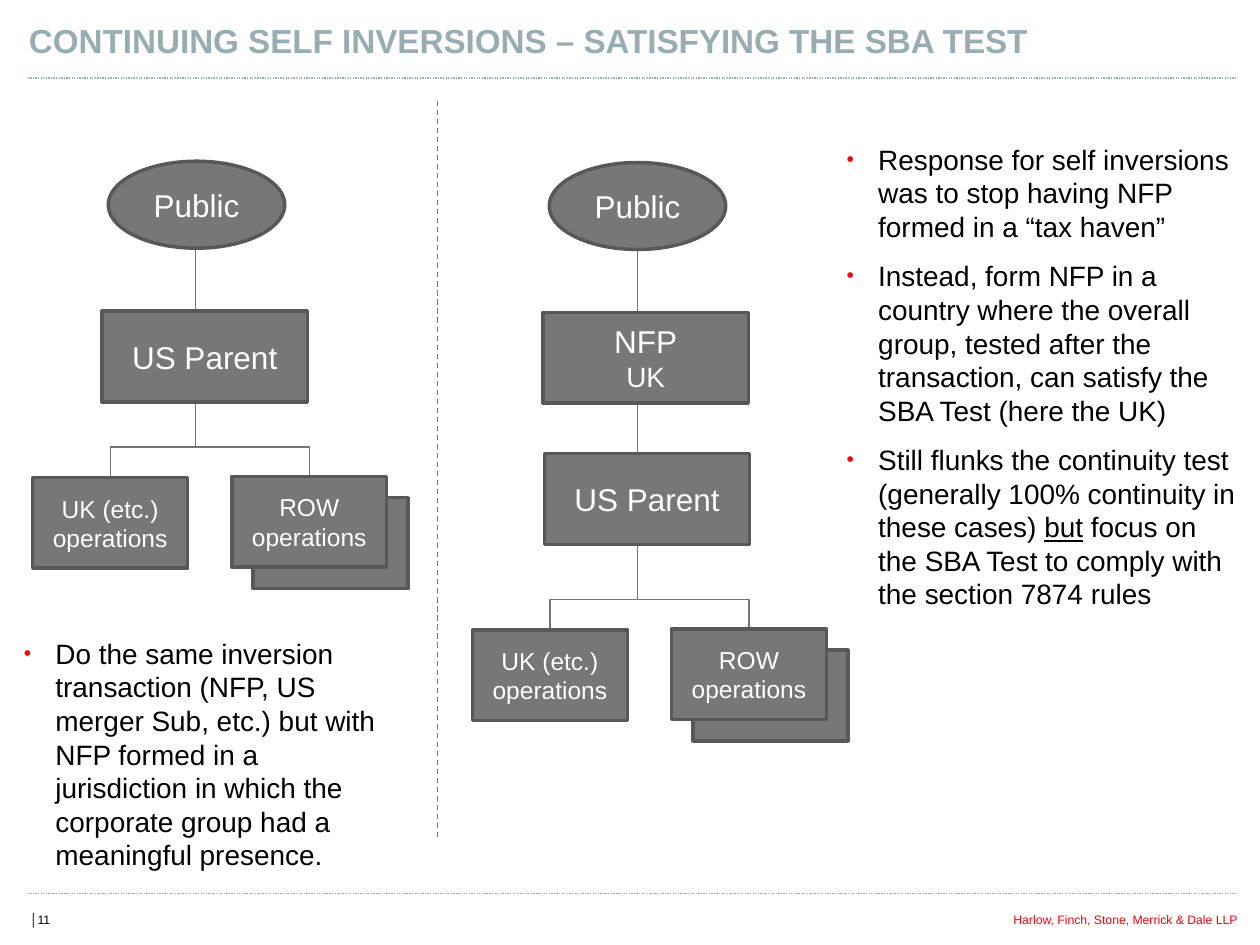
from lxml import etree
from pptx import Presentation
from pptx.dml.color import RGBColor
from pptx.enum.dml import MSO_LINE
from pptx.enum.shapes import MSO_CONNECTOR as CONN, MSO_SHAPE as SHAPE
from pptx.enum.text import MSO_ANCHOR as ANCHOR, MSO_AUTO_SIZE as AUTO, PP_ALIGN as ALIGN
from pptx.oxml import parse_xml
from pptx.oxml.ns import nsdecls, qn
from pptx.util import Inches, Pt


def rgb(value):
    return RGBColor.from_string(value)


def style(font, size, color):
    font.name = "Arial"
    font.size = Pt(size)
    font.color.rgb = rgb(color)


prs = Presentation()
prs.slide_width, prs.slide_height = Inches(10), Inches(7.5)
s = prs.slides.add_slide(prs.slide_layouts[3])
title, left_body, right_body = s.placeholders

title.left, title.top, title.width, title.height = [Inches(v) for v in (0.13, 0.11, 8.5, 0.42)]
tf = title.text_frame
tf.text = "CONTINUING SELF INVERSIONS – SATISFYING THE SBA TEST"
tf.auto_size = AUTO.NONE
tf.vertical_anchor = ANCHOR.MIDDLE
p = tf.paragraphs[0]
p.alignment = ALIGN.LEFT
r = p.runs[0]
style(r.font, 19, "98ADB2")
r.font.bold = True

bodies = [
    (left_body, (0.14, 5.05, 2.93, 2.07), [
        ["Do the same inversion transaction (NFP, US merger Sub, etc.) but with NFP formed "
         "in a jurisdiction in which the corporate group had a meaningful presence."]]),
    (right_body, (6.67, 1.13, 3.15, 6.08), [
        ["Response for self inversions was to stop having NFP formed in a “tax haven”"],
        ["Instead, form NFP in a country where the overall group, tested after the "
         "transaction, can satisfy the SBA Test (here the UK)"],
        ["Still flunks the continuity test (generally 100% continuity in these cases) ",
         "but", " focus on the SBA Test to comply with the section 7874 rules"]]),
]
for sp, box, items in bodies:
    sp.left, sp.top, sp.width, sp.height = [Inches(v) for v in box]
    tf = sp.text_frame
    tf.auto_size = AUTO.NONE
    tf.margin_left = tf.margin_top = tf.margin_right = tf.margin_bottom = 0
    for i, parts in enumerate(items):
        p = tf.add_paragraph() if i else tf.paragraphs[0]
        p.level = 1
        pPr = p._p.get_or_add_pPr()
        pPr.set("marL", str(Inches(0.3)))
        pPr.set("indent", str(Inches(-0.25)))
        for bullet in ('<a:buClr {}><a:srgbClr val="FE000C"/></a:buClr>',
                       '<a:buSzPct {} val="75000"/>',
                       '<a:buFont {} typeface="Arial"/>',
                       '<a:buChar {} char="•"/>'):
            pPr.append(parse_xml(bullet.format(nsdecls("a"))))
        p.space_before = Pt(3 if i else 0)
        p.space_after = Pt(6)
        for text in parts:
            r = p.add_run()
            r.text = text
            style(r.font, 16, "000000")
            if text == "but":
                r.font.underline = True

lines = [
    (0.22, 0.62, 9.82, 0.62, "98ADB2", MSO_LINE.ROUND_DOT),
    (0.22, 7.09, 9.82, 7.09, "98ADB2", MSO_LINE.ROUND_DOT),
    (3.47, 0.8, 3.47, 6.65, "747474", MSO_LINE.DASH),
    (1.55, 1.93, 1.55, 3.54, "747474", None),
    (5.06, 1.64, 5.06, 4.76, "747474", None),
]
for x1, y1, x2, y2, color, dash in lines:
    c = s.shapes.add_connector(CONN.STRAIGHT, Inches(x1), Inches(y1), Inches(x2), Inches(y2))
    c.line.color.rgb = rgb(color)
    c.line.width = Pt(0.75)
    c.line.dash_style = dash
    etree.SubElement(c._element.spPr, qn("a:effectLst"))

for x, y in [(1.66, 3), (5.15, 4.21)]:
    c = s.shapes.add_connector(CONN.ELBOW, Inches(x + 0.01), Inches(y + 1.58), Inches(x), Inches(y))
    c.line.color.rgb = rgb("747474")
    c.line.width = Pt(0.75)
    spPr = c._element.spPr
    spPr.find(qn("a:xfrm")).set("rot", "5400000")
    guides = spPr.find(qn("a:prstGeom")).get_or_add_avLst()
    etree.SubElement(guides, qn("a:gd"), name="adj1", fmla="val 2500000")
    etree.SubElement(spPr, qn("a:effectLst"))

public, parent, unit = (1.4, 0.69), (1.63, 0.72), (1.23, 0.72)
nodes = [
    (SHAPE.OVAL, 0.86, 1.28, public, [("Public", 18)]),
    (SHAPE.RECTANGLE, 0.81, 2.47, parent, [("US Parent", 18)]),
    (SHAPE.OVAL, 4.36, 1.29, public, [("Public", 18)]),
    (SHAPE.RECTANGLE, 4.31, 2.48, parent, [("NFP", 18), ("UK", 16)]),
    (SHAPE.RECTANGLE, 4.32, 3.6, parent, [("US Parent", 18)]),
]
for x, y in [(0.26, 3.79), (3.75, 5)]:
    nodes += [
        (SHAPE.RECTANGLE, x, y, unit, [("UK (etc.)", 14), ("operations", 14)]),
        (SHAPE.RECTANGLE, x + 1.75, y + 0.16, unit, []),
        (SHAPE.RECTANGLE, x + 1.58, y - 0.01, unit, [("ROW", 14), ("operations", 14)]),
    ]
for kind, x, y, (w, h), labels in nodes:
    sp = s.shapes.add_shape(kind, Inches(x), Inches(y), Inches(w), Inches(h))
    sp.shadow.inherit = False
    sp.fill.solid()
    sp.fill.fore_color.rgb = rgb("777777")
    sp.line.color.rgb = rgb("585858")
    sp.line.width = Pt(2)
    tf = sp.text_frame
    tf.vertical_anchor = ANCHOR.MIDDLE
    for i, (text, size) in enumerate(labels):
        p = tf.add_paragraph() if i else tf.paragraphs[0]
        p.text = text
        p.alignment = ALIGN.CENTER
        style(p.runs[0].font, size, "FFFFFF")

footers = [
    (0.14, 5.13, 0.22, "│11", "000000", ALIGN.LEFT),
    (6.59, 3.33, 0.42, "Harlow, Finch, Stone, Merrick & Dale LLP", "FE000C", ALIGN.RIGHT),
]
for x, w, h, text, color, align in footers:
    tf = s.shapes.add_textbox(Inches(x), Inches(7.19), Inches(w), Inches(h)).text_frame
    tf.word_wrap = True
    tf.text = text
    p = tf.paragraphs[0]
    p.alignment = align
    style(p.runs[0].font, 7, color)

prs.save("out.pptx")
